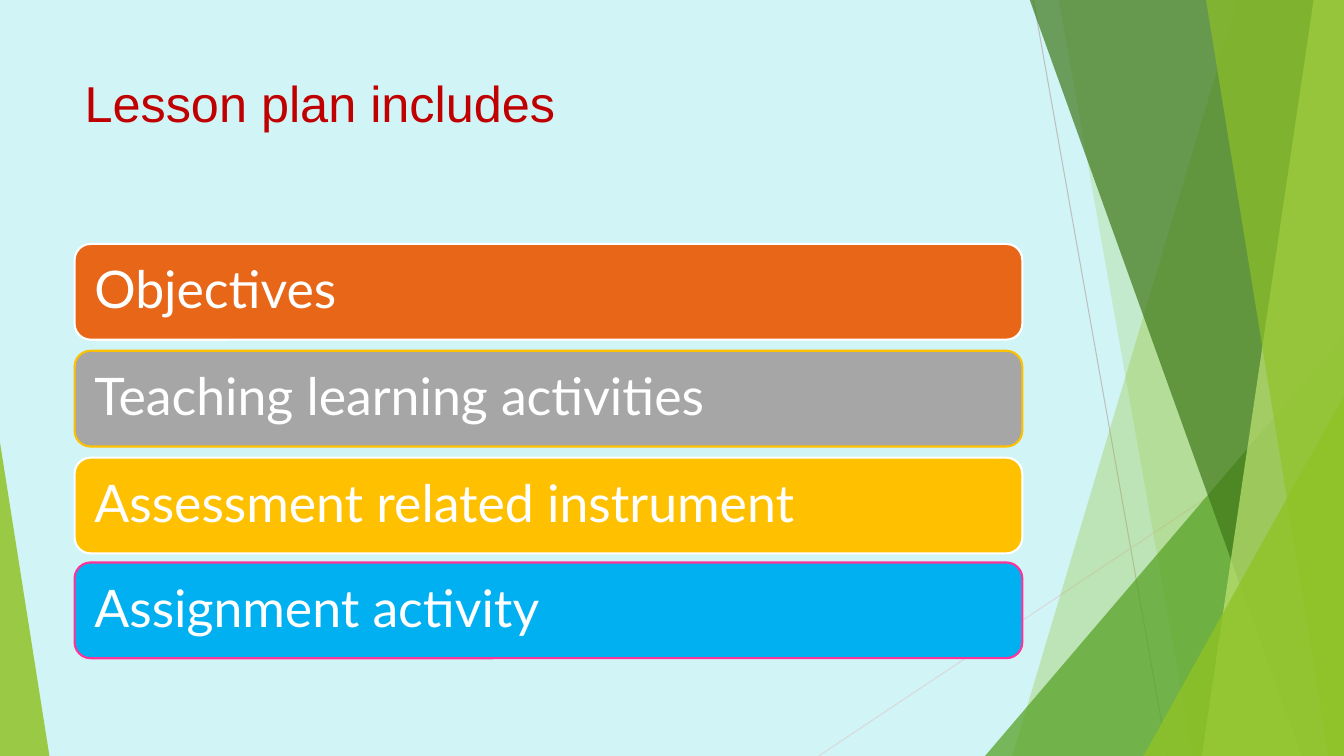
from dataclasses import dataclass

from lxml import etree
from pptx import Presentation
from pptx.dml.color import RGBColor
from pptx.enum.shapes import MSO_CONNECTOR, MSO_SHAPE
from pptx.enum.text import MSO_ANCHOR, PP_ALIGN
from pptx.oxml.ns import qn
from pptx.util import Inches, Pt

STRAIGHT = MSO_CONNECTOR.STRAIGHT
TRIANGLE = MSO_SHAPE.ISOSCELES_TRIANGLE
ROUNDED = MSO_SHAPE.ROUNDED_RECTANGLE
LEFT = PP_ALIGN.LEFT
TOP, MIDDLE = MSO_ANCHOR.TOP, MSO_ANCHOR.MIDDLE


@dataclass(frozen=True)
class Theme:
    """Colours, fonts and type sizes of the deck."""
    background: str = "D1F4F7"
    lime: str = "90C226"
    green: str = "54A021"
    forest: str = "3F7819"
    pale_lime: str = "C0E474"
    white: str = "FFFFFF"
    red: str = "C00000"
    orange: str = "E76618"
    grey: str = "A6A6A6"
    amber: str = "FFC000"
    blue: str = "00B0F0"
    pink: str = "FF3399"
    rule_dark: str = "BFBFBF"
    rule_light: str = "D9D9D9"
    title_font: str = "Arial"
    bar_font: str = "Lato"
    title_size: int = 36
    bar_size: int = 37


class SlideBuilder:
    """Draws styled elements on one slide."""

    def __init__(self, slide, theme):
        self.slide = slide
        self.shapes = slide.shapes
        self.theme = theme
        fill = slide.background.fill
        fill.solid()
        fill.fore_color.rgb = RGBColor.from_string(theme.background)

    def paint(self, shape, color, opacity=100):
        """Give a shape a plain fill with no line or shadow."""
        shape.shadow.inherit = False
        shape.fill.solid()
        shape.fill.fore_color.rgb = RGBColor.from_string(color)
        shape.line.fill.background()
        if opacity < 100:
            solid_fill = shape._element.spPr.find(qn("a:solidFill"))
            color_node = solid_fill.find(qn("a:srgbClr"))
            etree.SubElement(color_node, qn("a:alpha"), val=str(opacity * 1000))

    def rule(self, start, end, color):
        """Draw a thin straight line."""
        points = [Inches(value) for value in (*start, *end)]
        line = self.shapes.add_connector(STRAIGHT, *points)
        line.line.color.rgb = RGBColor.from_string(color)
        line.line.width = Pt(0.75)
        etree.SubElement(line._element.spPr, qn("a:effectLst"))

    def band(self, top_x, bottom_x, color, opacity):
        """Draw a slanted band that reaches the right edge."""
        top, right, bottom = -0.01, 13.33, 7.5
        corners = [(top_x, top), (right, top), (right, bottom), (bottom_x, bottom)]
        first, *others = [(Inches(x), Inches(y)) for x, y in corners]
        outline = self.shapes.build_freeform(*first, scale=1.0)
        outline.add_line_segments(others, close=True)
        self.paint(outline.convert_to_shape(), color, opacity)

    def triangle(self, bounds, apex, color, opacity):
        """Draw a right triangle with its apex at one side."""
        shape = self.shapes.add_shape(TRIANGLE, *map(Inches, bounds))
        shape.adjustments[0] = apex
        self.paint(shape, color, opacity)

    def label(self, shape, text, font, size, color, anchor):
        """Put one left-aligned paragraph in a shape."""
        frame = shape.text_frame
        frame.word_wrap = True
        frame.vertical_anchor = anchor
        paragraph = frame.paragraphs[0]
        paragraph.text = text
        paragraph.alignment = LEFT
        paragraph.font.name = font
        paragraph.font.size = Pt(size)
        paragraph.font.color.rgb = RGBColor.from_string(color)
        return frame

    def title(self, text, bounds):
        """Add the slide title."""
        box = self.shapes.add_textbox(*map(Inches, bounds))
        theme = self.theme
        self.label(box, text, theme.title_font, theme.title_size, theme.red, TOP)

    def bar(self, text, top, fill, line):
        """Add a rounded bar with its label."""
        bounds = (0.74, top, 9.4, 0.95)
        bar = self.shapes.add_shape(ROUNDED, *map(Inches, bounds))
        self.paint(bar, fill)
        bar.line.color.rgb = RGBColor.from_string(line)
        bar.line.width = Pt(1.5)
        theme = self.theme
        frame = self.label(bar, text, theme.bar_font, theme.bar_size, theme.white, MIDDLE)
        frame.margin_left = frame.margin_right = Inches(0.15)
        frame.margin_top = frame.margin_bottom = Inches(0.15)
        frame.paragraphs[0].line_spacing = 0.9


def main():
    """Build the lesson plan slide."""
    theme = Theme()
    deck = Presentation()
    deck.slide_width, deck.slide_height = Inches(13.33), Inches(7.5)
    page = SlideBuilder(deck.slides.add_slide(deck.slide_layouts[6]), theme)

    page.rule((10.25, 0), (11.58, 7.5), theme.rule_dark)
    page.rule((13.33, 4.03), (8.12, 7.5), theme.rule_light)
    page.band(12.28, 10.04, theme.lime, 30)
    page.band(10.5, 11.83, theme.lime, 20)
    page.triangle((9.77, 3.33, 3.56, 4.17), 1, theme.green, 72)
    page.band(10.21, 12.91, theme.forest, 70)
    page.band(13.03, 11.92, theme.pale_lime, 70)
    page.band(11.96, 13.18, theme.lime, 65)
    page.triangle((11.34, 3.93, 1.99, 3.57), 1, theme.lime, 80)
    page.triangle((0, 4.39, 0.49, 3.11), 0, theme.lime, 85)

    page.title("Lesson plan includes", (0.74, 0.67, 9.4, 1.44))
    bars = [
        ("Objectives", 2.42, theme.orange, theme.white),
        ("Teaching learning activities", 3.48, theme.grey, theme.amber),
        ("Assessment related instrument", 4.54, theme.amber, theme.white),
        ("Assignment activity", 5.58, theme.blue, theme.pink),
    ]
    for text, top, fill, line in bars:
        page.bar(text, top, fill, line)

    deck.save("out.pptx")


if __name__ == "__main__":
    main()
